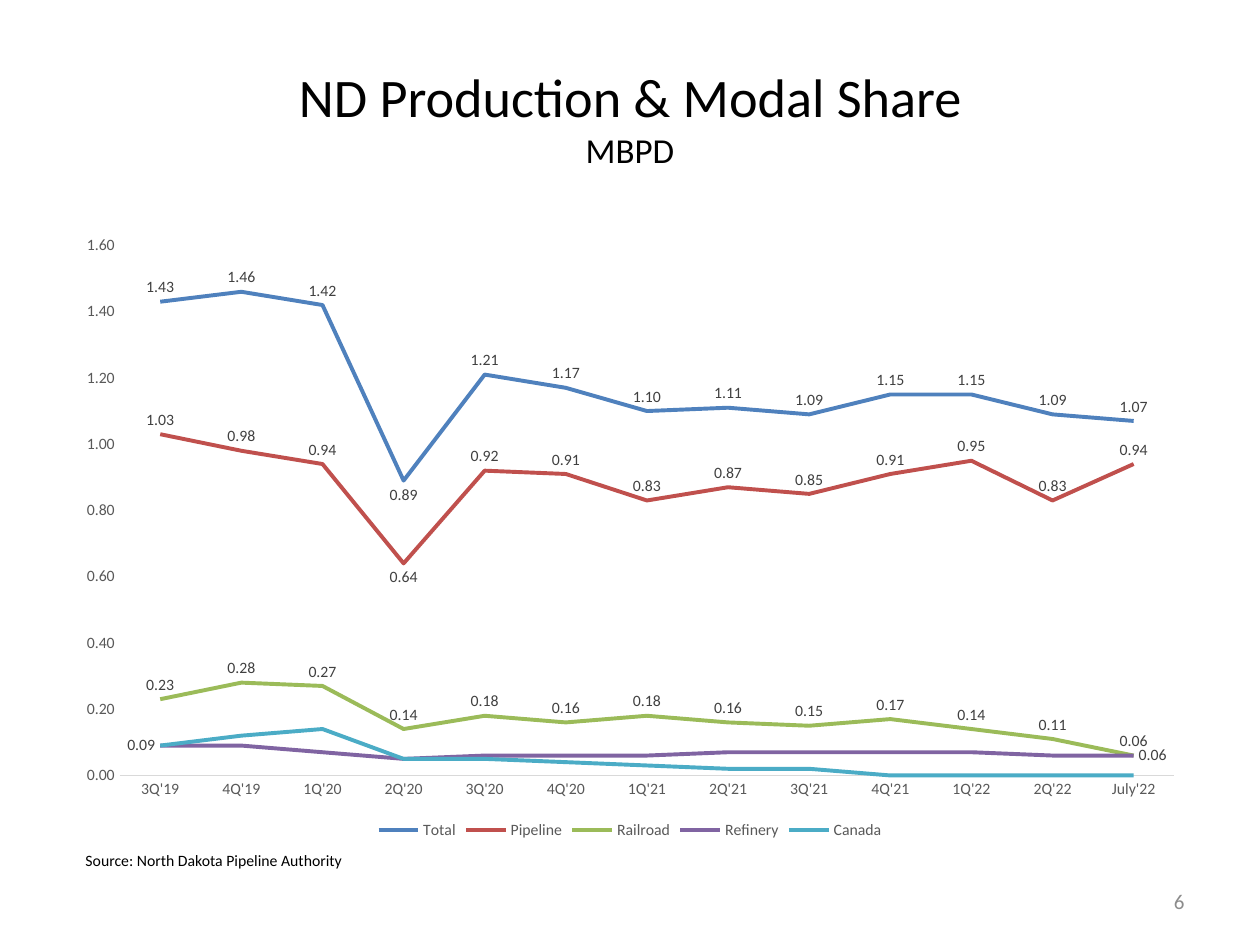
from pptx import Presentation
from pptx.chart.data import CategoryChartData
from pptx.dml.color import RGBColor
from pptx.enum.chart import XL_CHART_TYPE as ChartType, XL_LABEL_POSITION as Place
from pptx.enum.chart import XL_LEGEND_POSITION as LegendPlace, XL_TICK_MARK as Tick
from pptx.enum.text import MSO_ANCHOR as Anchor, PP_ALIGN as Align
from pptx.util import Inches, Pt
from lxml.etree import SubElement
from pptx.oxml.ns import qn

# Content
TITLE = [("ND Production & Modal Share", "title"), ("MBPD", "subtitle")]
SOURCE = [("Source: North Dakota Pipeline Authority", "small")]
PAGE_NUMBER = [("6", "page_number")]
QUARTERS = ["3Q'19", "4Q'19", "1Q'20", "2Q'20", "3Q'20", "4Q'20", "1Q'21",
            "2Q'21", "3Q'21", "4Q'21", "1Q'22", "2Q'22", "July'22"]
SERIES = {
    "Total": [1.43, 1.46, 1.42, 0.89, 1.21, 1.17, 1.10, 1.11, 1.09, 1.15, 1.15, 1.09, 1.07],
    "Pipeline": [1.03, 0.98, 0.94, 0.64, 0.92, 0.91, 0.83, 0.87, 0.85, 0.91, 0.95, 0.83, 0.94],
    "Railroad": [0.23, 0.28, 0.27, 0.14, 0.18, 0.16, 0.18, 0.16, 0.15, 0.17, 0.14, 0.11, 0.06],
    "Refinery": [0.09, 0.09, 0.07, 0.05, 0.06, 0.06, 0.06, 0.07, 0.07, 0.07, 0.07, 0.06, 0.06],
    "Canada": [0.09, 0.12, 0.14, 0.05, 0.05, 0.04, 0.03, 0.02, 0.02, 0, 0, 0, 0],
}
LABELLED = ("Total", "Pipeline", "Railroad")  # a label above every point
SPECIAL_LABELS = {
    "Total": {3: Place.BELOW},
    "Pipeline": {3: Place.BELOW},
    "Refinery": {0: Place.LEFT, 12: Place.RIGHT},
}
PLOT_AREA = {"x": 0.05, "y": 0.04, "w": 0.93, "h": 0.85}  # shares of the chart

THEME = {
    "font": "Calibri",
    "sizes": {"title": 31, "subtitle": 20, "page_number": 12, "small": 9},
    "text": "000000", "page_number": "8C8C8C",
    "axis_text": "595959", "label_text": "404040", "axis_line": "D9D9D9",
    "lines": ["4F81BD", "C0504D", "9BBB59", "8064A2", "4BACC6"],
}


def set_font(font, size, color):
    font.name, font.size, font.bold = THEME["font"], Pt(size), False
    font.color.rgb = RGBColor.from_string(color)


def add_text(page, lines, left, top, width, height, *, align=Align.LEFT,
             anchor=Anchor.TOP, color=THEME["text"], wrap=True):
    box = page.shapes.add_textbox(*map(Inches, (left, top, width, height)))
    frame = box.text_frame
    frame.word_wrap, frame.vertical_anchor = wrap, anchor
    para = frame.paragraphs[0]
    para.alignment = align
    for index, (text, style) in enumerate(lines):
        if index:
            para.add_line_break()
        span = para.add_run()
        span.text = text
        set_font(span.font, THEME["sizes"][style], color)


def add_share_chart(page):
    data = CategoryChartData(number_format="0.00")
    data.categories = QUARTERS
    for name, values in SERIES.items():
        data.add_series(name, values)
    area = map(Inches, (0.5, 1.75, 9, 4.95))
    chart = page.shapes.add_chart(ChartType.LINE, *area, data).chart
    set_font(chart.font, 10, THEME["text"])
    chart.has_title = False
    small = THEME["sizes"]["small"]

    # Legend
    chart.has_legend = True
    chart.legend.position = LegendPlace.BOTTOM
    chart.legend.include_in_layout = False
    set_font(chart.legend.font, small, THEME["axis_text"])

    # Axes
    for axis in (chart.category_axis, chart.value_axis):
        axis.major_tick_mark = axis.minor_tick_mark = Tick.NONE
        axis.has_major_gridlines = False
        set_font(axis.tick_labels.font, small, THEME["axis_text"])
    base_line = chart.category_axis.format.line
    base_line.width = Pt(0.75)
    base_line.color.rgb = RGBColor.from_string(THEME["axis_line"])
    scale = chart.value_axis
    scale.minimum_scale, scale.maximum_scale, scale.major_unit = 0, 1.6, 0.2
    scale.format.line.fill.background()
    scale.tick_labels.number_format = "0.00"
    scale.tick_labels.number_format_is_linked = False

    # Lines and their labels
    plot = chart.plots[0]
    for series, color in zip(plot.series, THEME["lines"]):
        series.smooth = False
        series.format.line.width = Pt(2.25)
        series.format.line.color.rgb = RGBColor.from_string(color)
        special = SPECIAL_LABELS.get(series.name, {})
        if series.name in LABELLED or special:
            labels = series.data_labels
            labels.show_value = series.name in LABELLED
            labels.number_format, labels.number_format_is_linked = "0.00", False
            labels.position = Place.ABOVE
            set_font(labels.font, small, THEME["label_text"])
        for index, position in special.items():
            label = series.points[index].data_label
            set_font(label.font, small, THEME["label_text"])
            label.position = position

    # Fixed inner plot area
    plot_area = chart.plots[0]._element.getparent()
    layout = plot_area.find(qn("c:layout"))
    if layout is None:
        layout = SubElement(plot_area, qn("c:layout"))
        plot_area.insert(0, layout)
    manual = SubElement(layout, qn("c:manualLayout"))
    settings = {"layoutTarget": "inner", "xMode": "edge", "yMode": "edge", **PLOT_AREA}
    for tag, value in settings.items():
        SubElement(manual, qn(f"c:{tag}")).set("val", str(value))


def main():
    deck = Presentation()
    deck.slide_width, deck.slide_height = Inches(10), Inches(7.5)
    page = deck.slides.add_slide(deck.slide_layouts[6])
    add_text(page, TITLE, 0.5, 0.3, 9, 1.25, align=Align.CENTER, anchor=Anchor.MIDDLE)
    add_share_chart(page)
    add_text(page, SOURCE, 0.58, 6.7, 2.25, 0.25, wrap=False)
    add_text(page, PAGE_NUMBER, 7.17, 6.95, 2.33, 0.4, align=Align.RIGHT,
             anchor=Anchor.MIDDLE, color=THEME["page_number"])
    deck.save("out.pptx")


if __name__ == "__main__":
    main()
